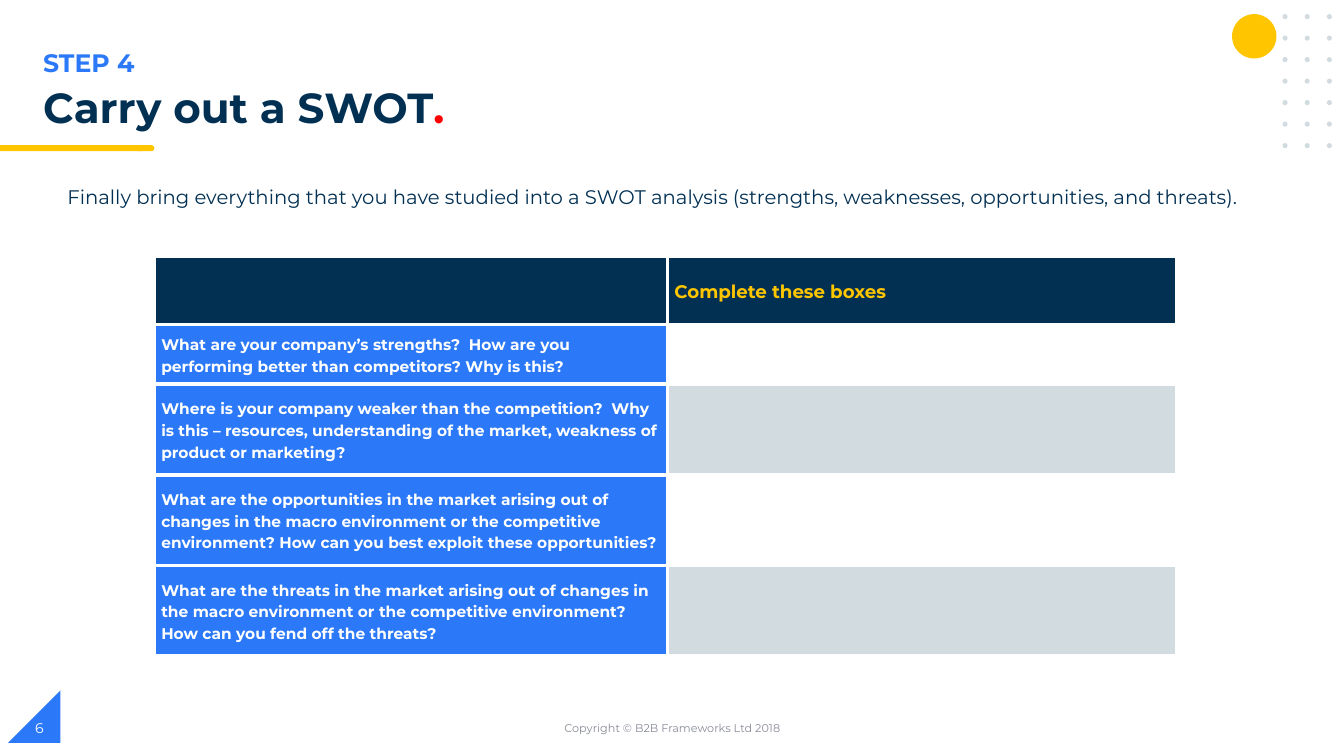
from lxml.etree import SubElement, Element
from pptx import Presentation
from pptx.dml.color import RGBColor
from pptx.enum.shapes import MSO_SHAPE as Shape
from pptx.enum.text import MSO_ANCHOR as Anchor, PP_ALIGN as Align
from pptx.oxml.ns import qn
from pptx.util import Inches, Pt

NAVY = RGBColor(0x02, 0x30, 0x53)
BLUE = RGBColor(0x2B, 0x79, 0xF8)
YELLOW = RGBColor(0xFF, 0xC6, 0x00)
RED = RGBColor(0xFF, 0x00, 0x00)
MIST = RGBColor(0xD1, 0xDB, 0xE0)
GREY = RGBColor(0x88, 0x8C, 0x97)
WHITE = RGBColor(0xFF, 0xFF, 0xFF)

QUESTIONS = [
    "What are your company’s strengths?  How are you performing better than "
    "competitors? Why is this?",
    "Where is your company weaker than the competition?  Why is this – resources, "
    "understanding of the market, weakness of product or marketing?",
    "What are the opportunities in the market arising out of changes in the macro "
    "environment or the competitive environment? How can you best exploit these "
    "opportunities?",
    "What are the threats in the market arising out of changes in the macro "
    "environment or the competitive environment?  How can you fend off the threats?",
]


class SlideBuilder:
    font = "Montserrat"
    border_width = Pt(3)

    def __init__(self, page):
        self.page = page

    def shape(self, kind, left, top, width, height, color):
        shape = self.page.shapes.add_shape(
            kind, Inches(left), Inches(top), Inches(width), Inches(height))
        shape.shadow.inherit = False
        shape.fill.solid()
        shape.fill.fore_color.rgb = color
        shape.line.fill.background()
        return shape

    def add_runs(self, para, runs, size, bold=False):
        for text, color in runs:
            span = para.add_run()
            span.text = text
            span.font.name = self.font
            span.font.size = Pt(size)
            span.font.bold = bold
            span.font.color.rgb = color

    def text(self, left, top, width, height, runs, size, bold=False,
             align=Align.LEFT, anchor=Anchor.TOP, spacing=1.0):
        box = self.page.shapes.add_textbox(
            Inches(left), Inches(top), Inches(width), Inches(height))
        frame = box.text_frame
        frame.word_wrap = True
        frame.vertical_anchor = anchor
        para = frame.paragraphs[0]
        para.alignment = align
        para.line_spacing = spacing
        self.add_runs(para, runs, size, bold)

    def borders(self, cell, color):
        properties = cell._tc.get_or_add_tcPr()
        for position, side in enumerate(("lnL", "lnR", "lnT", "lnB")):
            line = Element(qn(f"a:{side}"), w=str(self.border_width))
            fill = SubElement(line, qn("a:solidFill"))
            SubElement(fill, qn("a:srgbClr"), val=str(color))
            properties.insert(position, line)

    def cell(self, cell, fill, text="", color=WHITE, size=11):
        cell.fill.solid()
        cell.fill.fore_color.rgb = fill
        cell.margin_left = cell.margin_right = Inches(0.07)
        cell.margin_top = cell.margin_bottom = 0
        cell.vertical_anchor = Anchor.MIDDLE
        if text:
            para = cell.text_frame.paragraphs[0]
            para.line_spacing = 1.15
            self.add_runs(para, [(text, color)], size, bold=True)
        self.borders(cell, WHITE)

    def table(self, left, top, widths, heights):
        table = self.page.shapes.add_table(
            len(heights), len(widths), Inches(left), Inches(top),
            Inches(sum(widths)), Inches(sum(heights))).table
        for column, width in zip(table.columns, widths):
            column.width = Inches(width)
        for row, height in zip(table.rows, heights):
            row.height = Inches(height)
        return table


def main():
    deck = Presentation()
    deck.slide_width = Inches(13.33)
    deck.slide_height = Inches(7.5)
    slide = SlideBuilder(deck.slides.add_slide(deck.slide_layouts[6]))

    corner = slide.shape(Shape.RIGHT_TRIANGLE, 0.08, 6.85, 0.52, 0.52, BLUE)
    corner._element.spPr.get_or_add_xfrm().set("flipH", "1")
    slide.shape(Shape.FLOWCHART_TERMINATOR, 1.34, 1.44, 0.19, 0.06, YELLOW)
    slide.shape(Shape.RECTANGLE, 0, 1.44, 1.41, 0.06, YELLOW)
    slide.shape(Shape.OVAL, 12.22, 0.14, 0.44, 0.44, YELLOW)
    for row in range(7):
        for column in range(3):
            slide.shape(Shape.OVAL, 12.72 + 0.22 * column, 0.14 + 1.28 * row / 6,
                        0.05, 0.05, MIST)

    slide.text(0.33, 0.42, 6.69, 0.4, [("STEP 4", BLUE)], 18, bold=True)
    slide.text(0.33, 0.82, 12.08, 0.56, [("Carry out a SWOT", NAVY), (".", RED)],
               30, bold=True, spacing=0.9)
    slide.text(0.57, 1.79, 12.08, 0.34,
               [("Finally bring everything that you have studied into a SWOT analysis "
                 "(strengths, weaknesses, opportunities, and threats).", NAVY)], 14)

    swot = slide.table(1.53, 2.54, [5.09, 5.05], [0.68, 0.59, 0.9, 0.9, 0.9])
    slide.cell(swot.cell(0, 0), NAVY)
    slide.cell(swot.cell(0, 1), NAVY, "Complete these boxes", YELLOW, 13)
    for row, question in enumerate(QUESTIONS, start=1):
        slide.cell(swot.cell(row, 0), BLUE, question)
        slide.cell(swot.cell(row, 1), WHITE if row % 2 else MIST)

    slide.text(4.42, 7.02, 4.5, 0.4, [("Copyright © B2B Frameworks Ltd 2018", GREY)],
               8, align=Align.CENTER, anchor=Anchor.MIDDLE)
    slide.text(0.25, 7.02, 3, 0.4, [("6", WHITE)], 10, anchor=Anchor.MIDDLE)

    deck.save("out.pptx")


if __name__ == "__main__":
    main()
